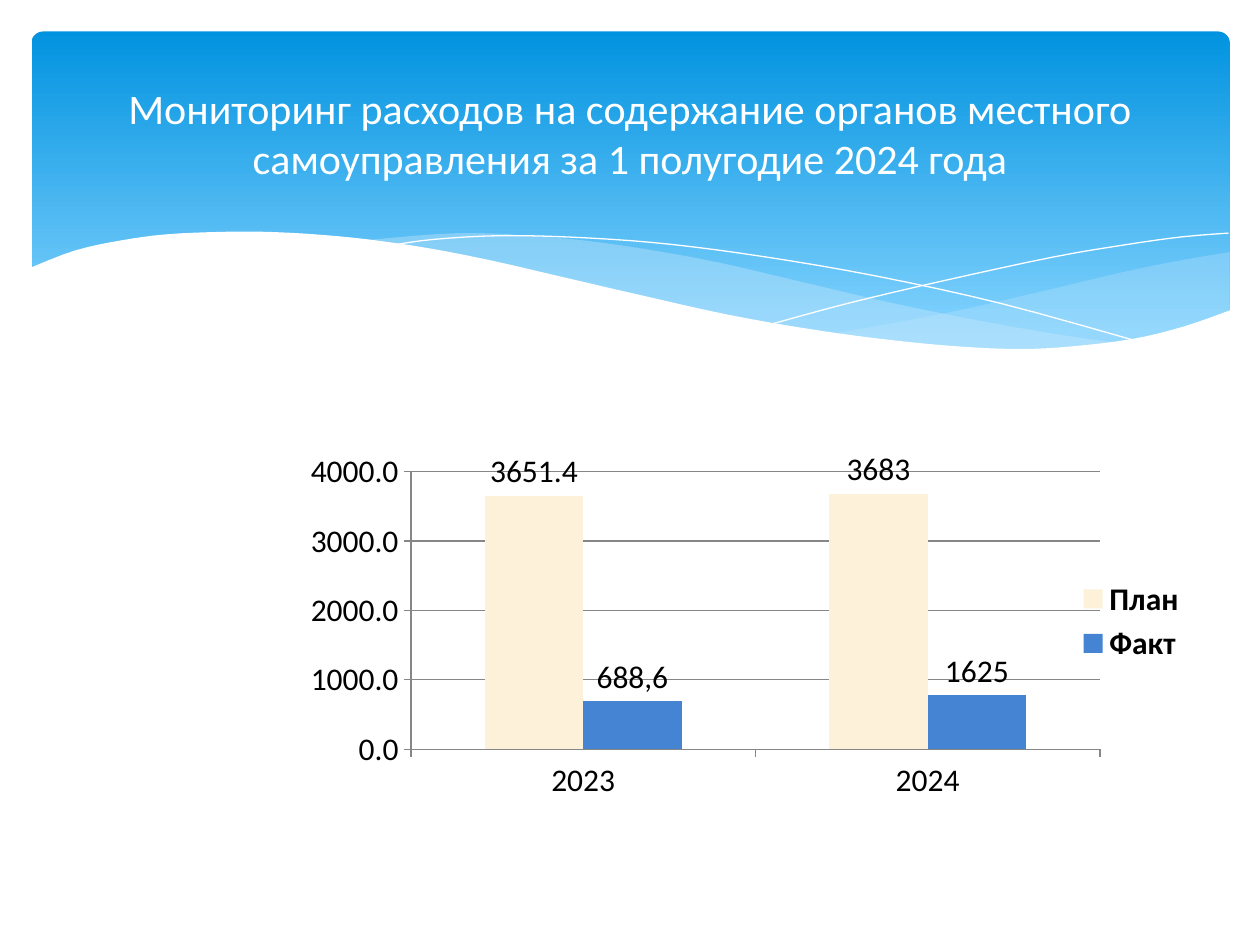
from lxml import etree
from pptx import Presentation
from pptx import util as u
from pptx.chart.data import CategoryChartData
from pptx.dml.color import RGBColor
from pptx.enum import chart as ch, shapes, text
from pptx.oxml import parse_xml
from pptx.oxml.ns import nsdecls, qn

WIDE, HIGH = u.Inches(10), u.Inches(7.5)
COLS, ROWS = 10, 7.5
HUES = {"deep": "0293E0", "light": "83D3FE", "wave": "C6E7FC", "white": "FFFFFF",
        "text": "000000", "axis": "868686", "plan": "FDF2D9", "fact": "4584D3"}
FONT = "Calibri"
CATS = ["2023", "2024"]
# name, hue, values, label texts that stand in for values
SERIES = [("План", "plan", (3651.4, 3683), {1: "3683"}),
          ("Факт", "fact", (688.6, 776), {0: "688,6", 1: "1625"})]
PLOT = {"x": 0.279, "y": 0.186, "w": 0.63, "h": 0.583}

# Each wave is a list of strokes; a stroke is smoothed, corners fall between strokes.
RIGHT = [[(9.76, 2), (9.35, 2.07), (8.91, 2.16), (8.32, 2.3), (7.53, 2.48), (6.61, 2.65)],
         [(6.61, 2.65), (7.05, 2.71), (7.57, 2.76), (8.03, 2.78), (8.44, 2.77),
          (8.89, 2.72), (9.35, 2.62), (9.76, 2.47)]]
MIDDLE = [[(8.93, 2.73), (8.37, 2.65), (7.75, 2.54), (7.06, 2.4), (6.29, 2.22),
           (5.69, 2.08), (5.14, 1.98), (4.65, 1.91), (4.2, 1.87), (3.8, 1.85),
           (3.44, 1.86), (2.86, 1.91)],
          [(2.86, 1.91), (3.42, 1.99), (4.04, 2.11), (4.91, 2.32), (5.66, 2.48),
           (6.34, 2.61), (6.95, 2.7), (7.48, 2.76), (7.96, 2.78), (8.38, 2.78),
           (8.93, 2.73)]]
FALL = [[(3.09, 1.95), (3.44, 1.9), (4.01, 1.87), (4.69, 1.89), (5.33, 1.94),
         (6.08, 2.04), (6.95, 2.19), (7.95, 2.41), (9.07, 2.72)]]
RISE = [[(6.13, 2.57), (6.72, 2.41), (7.48, 2.23), (8.36, 2.04), (8.95, 1.94),
         (9.38, 1.88), (9.75, 1.85)]]
FRONT = [[(9.77, 2.46), (9.4, 2.59), (8.99, 2.69), (8.5, 2.75), (8.09, 2.77),
          (7.61, 2.75), (7.08, 2.7), (6.48, 2.62), (5.79, 2.5), (5.03, 2.33),
          (4.47, 2.2), (3.91, 2.07), (3.4, 1.97), (2.92, 1.9), (2.5, 1.86),
          (2.11, 1.84), (1.77, 1.84), (1.32, 1.86), (0.95, 1.91), (0.59, 1.99),
          (0.23, 2.13)],
         [(0.23, 3.29), (9.77, 3.29)]]


def rgb(hue):
    return RGBColor.from_string(HUES[hue])


def spot(col, row):
    return round(WIDE * col / COLS), round(HIGH * row / ROWS)


def box(col, row, cols, rows):
    return *spot(col, row), *spot(cols, rows)


def smooth(knots, steps=4):
    """Points of a Catmull-Rom curve through the knots."""
    ends = [knots[0], *knots, knots[-1]]
    for a, b, c, d in zip(ends, ends[1:], ends[2:], ends[3:]):
        for t in (k / steps for k in range(steps)):
            yield tuple((2 * q + (r - p) * t + (2 * p - 5 * q + 4 * r - s) * t ** 2
                         + (3 * q - p - 3 * r + s) * t ** 3) / 2
                        for p, q, r, s in zip(a, b, c, d))
    yield knots[-1]


def add_wave(slide, strokes, hue, alpha=100, filled=True):
    dots = [spot(*dot) for knots in strokes for dot in smooth(knots)]
    pen = slide.shapes.build_freeform(*dots[0])
    pen.add_line_segments(dots[1:], close=filled)
    wave = pen.convert_to_shape()
    wave.shadow.inherit = False
    if not filled:
        wave.fill.background()
        wave.line.color.rgb = rgb(hue)
        wave.line.width = u.Pt(0)
        return
    wave.line.fill.background()
    wave.fill.solid()
    wave.fill.fore_color.rgb = rgb(hue)
    if alpha < 100:
        tint = wave.element.spPr.find(".//" + qn("a:srgbClr"))
        etree.SubElement(tint, qn("a:alpha"), val=str(alpha * 1000))


def add_banner(slide):
    band = slide.shapes.add_shape(shapes.MSO_SHAPE.ROUNDED_RECTANGLE,
                                  *box(0.25, 0.25, 9.51, 2.7))
    band.adjustments[0] = 0.034
    band.shadow.inherit = False
    band.line.fill.background()
    band.fill.gradient()
    band.fill.gradient_angle = 270
    for stop, hue, place in zip(band.fill.gradient_stops, ("deep", "light"), (0, 0.9)):
        stop.color.rgb = rgb(hue)
        stop.position = place


def style(font, size, hue, bold=False):
    font.name, font.size, font.bold = FONT, u.Pt(size), bold
    font.color.rgb = rgb(hue)


def add_title(slide, words):
    frame = slide.shapes.add_textbox(*box(0.5, 0.37, 9, 1.37)).text_frame
    frame.word_wrap = True
    frame.vertical_anchor = text.MSO_ANCHOR.MIDDLE
    frame.text = words
    par = frame.paragraphs[0]
    par.alignment = text.PP_ALIGN.CENTER
    style(par.runs[0].font, 24, "white")


def set_plot(chart):
    """Fix the inner plot area at shares of the chart."""
    area = chart.element.find(".//" + qn("c:plotArea"))
    for old in area.findall(qn("c:layout")):
        area.remove(old)
    modes = "".join(f'<c:{key}Mode val="edge"/>' for key in "xy")
    sizes = "".join(f'<c:{key} val="{val}"/>' for key, val in PLOT.items())
    area.insert(0, parse_xml(
        f'<c:layout {nsdecls("c")}><c:manualLayout><c:layoutTarget val="inner"/>'
        f'{modes}{sizes}</c:manualLayout></c:layout>'))


def set_axes(chart):
    for axis in (chart.category_axis, chart.value_axis):
        axis.major_tick_mark = ch.XL_TICK_MARK.OUTSIDE
        axis.minor_tick_mark = ch.XL_TICK_MARK.NONE
        axis.format.line.color.rgb = rgb("axis")
    scale = chart.value_axis
    scale.minimum_scale, scale.maximum_scale, scale.major_unit = 0, 4000, 1000
    scale.tick_labels.number_format = "0.0"
    scale.tick_labels.number_format_is_linked = False
    scale.major_gridlines.format.line.color.rgb = rgb("axis")


def set_series(series, hue, notes):
    series.format.fill.solid()
    series.format.fill.fore_color.rgb = rgb(hue)
    labels = series.data_labels
    labels.show_value = True
    labels.position = ch.XL_LABEL_POSITION.OUTSIDE_END
    style(labels.font, 18, "text")
    for idx, note in notes.items():
        label = series.points[idx].data_label
        label.text_frame.text = note
        style(label.text_frame.paragraphs[0].runs[0].font, 18, "text")
        label.position = ch.XL_LABEL_POSITION.OUTSIDE_END


def add_bars(slide):
    data = CategoryChartData()
    data.categories = CATS
    for name, _, vals, _ in SERIES:
        data.add_series(name, vals)
    chart = slide.shapes.add_chart(ch.XL_CHART_TYPE.COLUMN_CLUSTERED,
                                   *box(0.84, 3.04, 8.68, 3.78), data).chart
    style(chart.font, 18, "text")
    chart.has_title = False
    chart.has_legend = True
    chart.legend.position = ch.XL_LEGEND_POSITION.RIGHT
    chart.legend.include_in_layout = False
    style(chart.legend.font, 18, "text", bold=True)
    plot = chart.plots[0]
    plot.gap_width, plot.overlap = 150, 0
    plot.vary_by_categories = False
    for series, (_, hue, _, notes) in zip(plot.series, SERIES):
        set_series(series, hue, notes)
    set_axes(chart)
    set_plot(chart)


def main():
    deck = Presentation()
    deck.slide_width, deck.slide_height = WIDE, HIGH
    slide = deck.slides.add_slide(deck.slide_layouts[6])
    add_banner(slide)
    add_wave(slide, RIGHT, "wave", 29)
    add_wave(slide, MIDDLE, "wave", 40)
    for line in (FALL, RISE):
        add_wave(slide, line, "white", filled=False)
    add_wave(slide, FRONT, "white")
    add_bars(slide)
    add_title(slide, "Мониторинг расходов на содержание органов местного "
                     "самоуправления за 1 полугодие 2024 года")
    deck.save("out.pptx")


if __name__ == "__main__":
    main()
